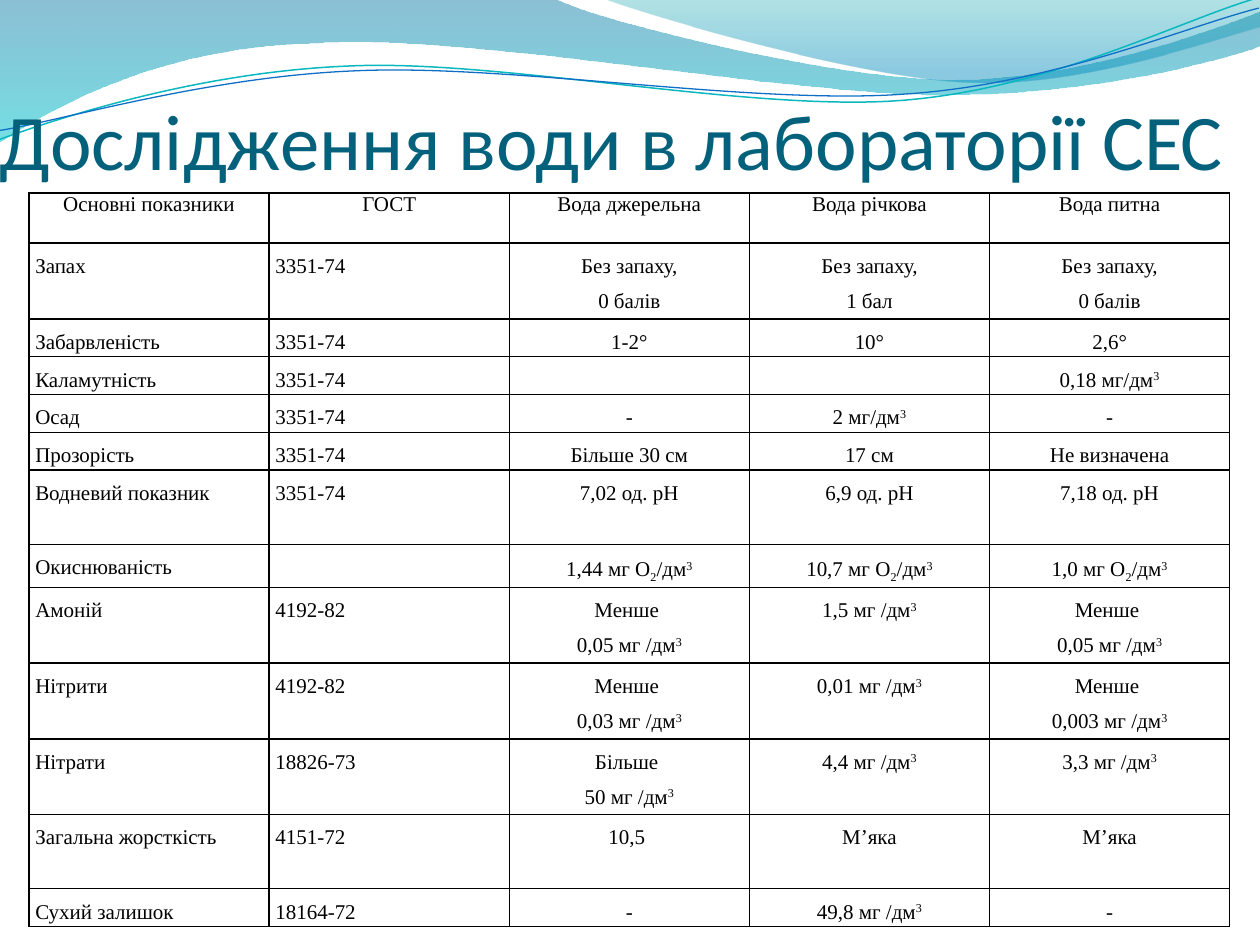
from itertools import groupby

from lxml import etree
from pptx import Presentation
from pptx import util as u
from pptx.dml.color import RGBColor
from pptx.enum import text
from pptx.oxml import ns

BLACK = RGBColor(0x00, 0x00, 0x00)
TITLE_TEAL = RGBColor(0x04, 0x61, 0x7B)
DEEP_BLUE = RGBColor(0x00, 0x74, 0xA1)
CYAN = RGBColor(0x00, 0xC6, 0xCF)
SEA_GREEN = RGBColor(0x00, 0xA1, 0xA9)
SKY_BLUE = RGBColor(0x00, 0x8B, 0xBF)
LINE_TEAL = RGBColor(0x0A, 0xB8, 0xBF)
LINE_BLUE = RGBColor(0x0F, 0x6F, 0xC6)

SCRIPTS = {"³": ("3", 30000), "₂": ("2", -25000)}

presentation = Presentation()
presentation.slide_width = u.Inches(10)
presentation.slide_height = u.Inches(7.5)
slide = presentation.slides.add_slide(presentation.slide_layouts[6])


def add_wave(segments, closed):
    """Draw segments of one point (line) or three points (cubic curve), in inches."""
    points = [(u.Inches(x), u.Inches(y)) for segment in segments
              for x, y in zip(segment[::2], segment[1::2])]
    builder = slide.shapes.build_freeform(*points[0])
    builder.add_line_segments(points[1:], close=closed)
    shape = builder.convert_to_shape()
    shape.shadow.inherit = False
    lines = iter(list(shape.element.iter(ns.qn("a:lnTo"))))
    for segment in segments[1:]:
        first = next(lines)
        if len(segment) == 6:
            first.tag = ns.qn("a:cubicBezTo")
            for control in (next(lines), next(lines)):
                first.append(control[0])
                control.getparent().remove(control)
    return shape


# Translucent waves: outline, then (position, colour, opacity %) for each stop
waves = [
    ([(0, 0), (4.4, -0.01), (4.76, 0.17, 6.64, 0.63, 7.58, 0.63),
      (8.53, 0.63, 9.58, 0.26, 10, 0.09), (10.01, 0.36),
      (9.83, 0.44, 8.7, 0.76, 7.46, 0.75), (6.22, 0.75, 3.82, 0.28, 2.57, 0.34),
      (1.29, 0.36, 0.46, 0.83, -0.01, 1.13)],
     [(0, DEEP_BLUE, 45), (1, CYAN, 55)]),
    ([(4.79, -0.01), (5.09, 0.11, 6.82, 0.62, 7.69, 0.65),
      (8.56, 0.69, 9.61, 0.32, 10, 0.21), (10, 0)],
     [(0, SEA_GREEN, 30), (0.8, SKY_BLUE, 45)]),
]
for outline, stops in waves:
    wave = add_wave(outline, closed=True)
    wave.line.fill.background()
    wave.fill.gradient()
    wave.fill.gradient_angle = 270
    for stop, (position, color, opacity) in zip(wave.fill.gradient_stops, stops):
        stop.position = position
        stop.color.rgb = color
    color_elements = list(wave.element.spPr.iter(ns.qn("a:srgbClr")))
    for element, (position, color, opacity) in zip(color_elements, stops):
        etree.SubElement(element, ns.qn("a:alpha"), val=str(opacity * 1000))

wave_lines = [
    ([(-0.02, 0.87), (0.47, 0.72, 1.58, 0.41, 2.78, 0.42),
      (3.96, 0.42, 5.91, 0.93, 7.12, 0.9), (8.32, 0.87, 9.4, 0.36, 10, 0.22)],
     LINE_TEAL, 0.85),
    ([(-0.02, 0.8), (0.46, 0.75, 1.64, 0.45, 2.83, 0.46),
      (4.03, 0.46, 5.96, 0.88, 7.16, 0.85), (8.35, 0.83, 9.42, 0.42, 10.01, 0.3)],
     LINE_BLUE, 0.75),
]
for outline, color, width in wave_lines:
    wave_line = add_wave(outline, closed=False)
    wave_line.rotation = 357.3
    wave_line.fill.background()
    wave_line.line.color.rgb = color
    wave_line.line.width = u.Pt(width)

# Title
title = slide.shapes.add_textbox(u.Inches(0), u.Inches(0.23), u.Inches(10), u.Inches(1.25))
frame = title.text_frame
frame.word_wrap = True
frame.vertical_anchor = text.MSO_ANCHOR.BOTTOM
frame.margin_left = frame.margin_right = frame.margin_bottom = 0
frame.margin_top = u.Inches(0.05)
paragraph = frame.paragraphs[0]
paragraph.text = "Дослідження води в лабораторії СЕС"
paragraph.font.name = "Calibri"
paragraph.font.size = u.Pt(45)
paragraph.font.color.rgb = TITLE_TEAL

# Water analysis table: row height, then the cells
rows = [
    (0.4, ["Основні показники", "ГОСТ", "Вода джерельна", "Вода річкова", "Вода питна"]),
    (0.59, ["Запах ", "3351-74", "Без запаху,\n0 балів", "Без запаху,\n1 бал",
            "Без запаху,\n0 балів"]),
    (0.3, ["Забарвленість ", "3351-74", "1-2°", "10°", "2,6°"]),
    (0.3, ["Каламутність ", "3351-74", "", "", "0,18 мг/дм³"]),
    (0.3, ["Осад ", "3351-74", "-", "2 мг/дм³", "-"]),
    (0.3, ["Прозорість ", "3351-74", "Більше 30 см", "17 см", "Не визначена"]),
    (0.59, ["Водневий показник", "3351-74", "7,02 од. рН", "6,9 од. рН", "7,18 од. рН"]),
    (0.3, ["Окиснюваність ", "", "1,44 мг О₂/дм³", "10,7 мг О₂/дм³", "1,0 мг О₂/дм³"]),
    (0.59, ["Амоній ", "4192-82", "Менше \n0,05 мг /дм³", "1,5 мг /дм³",
            "Менше \n0,05 мг /дм³"]),
    (0.59, ["Нітрити ", "4192-82", "Менше \n0,03 мг /дм³", "0,01 мг /дм³",
            "Менше \n0,003 мг /дм³"]),
    (0.59, ["Нітрати ", "18826-73", "Більше \n50 мг /дм³", "4,4 мг /дм³", "3,3 мг /дм³"]),
    (0.59, ["Загальна жорсткість", "4151-72", "10,5 ", "М’яка", "М’яка"]),
    (0.3, ["Сухий залишок", "18164-72", "-", "49,8 мг /дм³", "-"]),
]
table = slide.shapes.add_table(len(rows), 5, u.Inches(0.23), u.Inches(1.53),
                               u.Inches(9.53), u.Inches(5.74)).table
table.first_row = False
table.horz_banding = False
for column in table.columns:
    column.width = u.Inches(9.53 / 5)


def add_borders(cell):
    properties = cell._tc.get_or_add_tcPr()
    for index, side in enumerate(("a:lnL", "a:lnR", "a:lnT", "a:lnB")):
        border = etree.Element(ns.qn(side), w=str(u.Pt(1)))
        fill = etree.SubElement(border, ns.qn("a:solidFill"))
        etree.SubElement(fill, ns.qn("a:srgbClr"), val=str(BLACK))
        properties.insert(index, border)


for row_index, (height, entries) in enumerate(rows):
    table.rows[row_index].height = u.Inches(height)
    for column_index, entry in enumerate(entries):
        cell = table.cell(row_index, column_index)
        cell.margin_left = cell.margin_right = u.Inches(0.05)
        cell.margin_top = cell.margin_bottom = 0
        cell.fill.background()
        add_borders(cell)
        cell.text = entry
        is_label = row_index > 0 and column_index < 2
        for paragraph, content in zip(cell.text_frame.paragraphs, entry.split("\n")):
            paragraph.alignment = text.PP_ALIGN.JUSTIFY if is_label else text.PP_ALIGN.CENTER
            if row_index > 0 and content:
                paragraph.line_spacing = 1.5
            paragraph.clear()
            for script, characters in groupby(content, SCRIPTS.get):
                run = paragraph.add_run()
                run.text = script[0] if script else "".join(characters)
                run.font.name = "Times New Roman"
                run.font.size = u.Pt(12)
                run.font.color.rgb = BLACK
                if script:
                    run._r.get_or_add_rPr().set("baseline", str(script[1]))

presentation.save("out.pptx")
